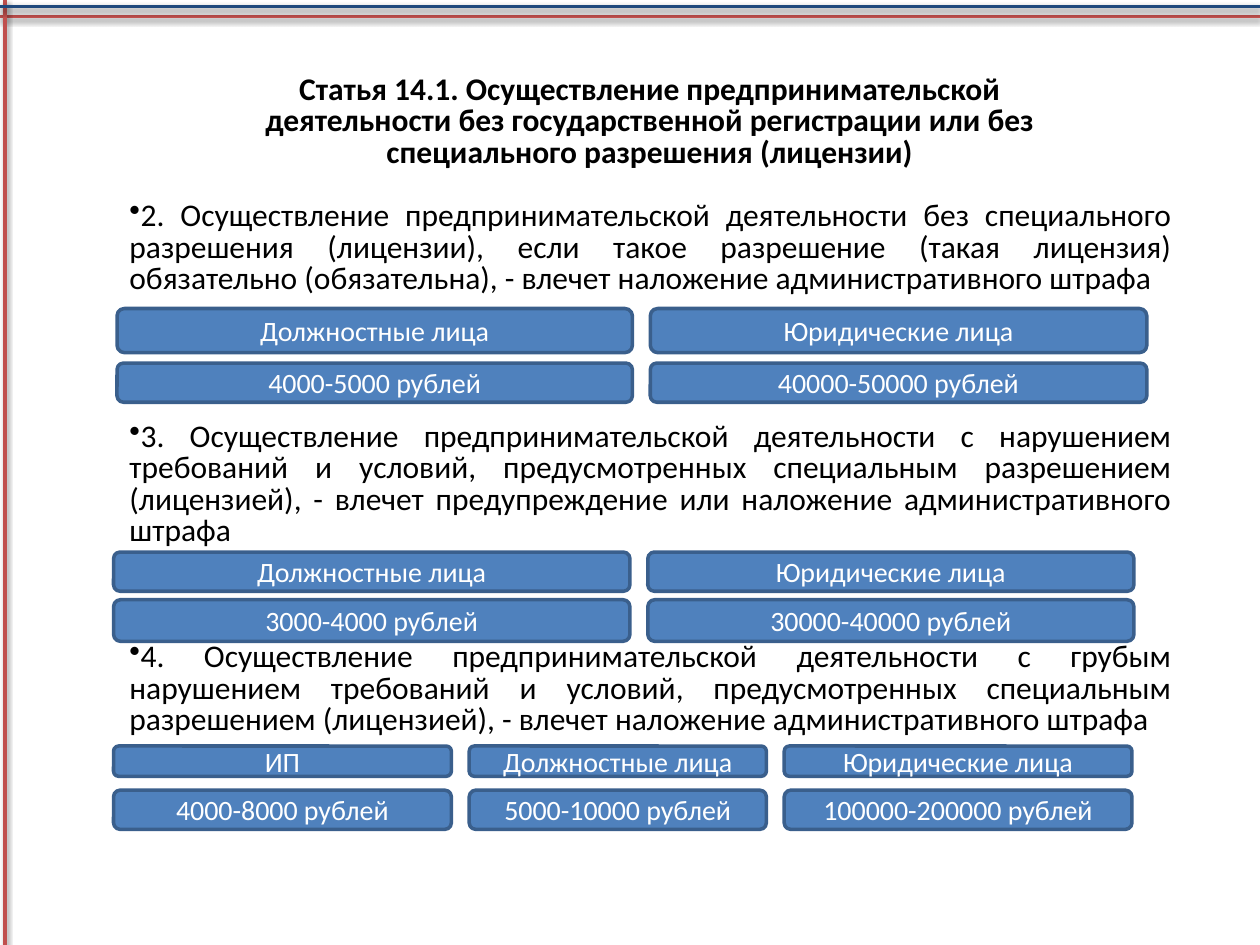
from lxml import etree
from pptx import Presentation
from pptx.dml.color import RGBColor
from pptx.enum.shapes import MSO_CONNECTOR, MSO_SHAPE
from pptx.enum.text import MSO_ANCHOR, MSO_AUTO_SIZE, PP_ALIGN
from pptx.oxml import parse_xml
from pptx.oxml.ns import nsdecls, qn
from pptx.util import Cm, Pt

LINE = MSO_CONNECTOR.STRAIGHT
ROUND = MSO_SHAPE.ROUNDED_RECTANGLE
CENTER, JUSTIFY = PP_ALIGN.CENTER, PP_ALIGN.JUSTIFY
MIDDLE, TOP = MSO_ANCHOR.MIDDLE, MSO_ANCHOR.TOP

FONT = "Calibri"
WIDE, HIGH = 25.4, 19.05
GAP = 0.36
COLORS = {"red": "C0504D", "navy": "1F497D", "blue": "4F81BD",
          "edge": "3A5F8C", "white": "FFFFFF", "black": "000000"}

TITLE = ("Статья 14.1. Осуществление предпринимательской деятельности без "
         "государственной регистрации или без специального разрешения (лицензии)")

# Space before in points, then wording
PARTS = [
    (0, "2. Осуществление предпринимательской деятельности без специального "
        "разрешения (лицензии), если такое разрешение (такая лицензия) обязательно "
        "(обязательна), - влечет наложение административного штрафа"),
    (72, "3. Осуществление предпринимательской деятельности с нарушением требований "
         "и условий, предусмотренных специальным разрешением (лицензией), - влечет "
         "предупреждение или наложение административного штрафа"),
    (54, "4. Осуществление предпринимательской деятельности с грубым нарушением "
         "требований и условий, предусмотренных специальным разрешением (лицензией), "
         "- влечет наложение административного штрафа"),
]

# Box (left, top, height), column widths, row heights, rows of wording
STAFF, FIRMS = "Должностные лица", "Юридические лица"
FINES = [
    ((2.36, 6.22, 1.89), (10.39, 10.01), (0.89, 0.79),
     [(STAFF, FIRMS), ("4000-5000 рублей", "40000-50000 рублей")]),
    ((2.29, 11.13, 1.8), (10.41, 9.8), (0.79, 0.84),
     [(STAFF, FIRMS), ("3000-4000 рублей", "30000-40000 рублей")]),
    ((2.29, 15.04, 1.68), (6.81, 5.99, 7.01), (0.61, 0.79),
     [("ИП", STAFF, FIRMS),
      ("4000-8000 рублей", "5000-10000 рублей", "100000-200000 рублей")]),
]


def tint(name):
    return RGBColor.from_string(COLORS[name])


def style(para, size, color, align, bold=False):
    para.alignment = align
    for run in para.runs:
        run.font.name, run.font.size = FONT, Pt(size)
        run.font.bold = bold
        run.font.color.rgb = tint(color)


def place(shape, box):
    shape.left, shape.top, shape.width, shape.height = map(Cm, box)


def add_rule(slide, start, end, color):
    rule = slide.shapes.add_connector(LINE, *map(Cm, start + end))
    rule.line.color.rgb = tint(color)
    rule.line.width = Pt(2)
    rule._element.spPr.append(parse_xml(
        f'<a:effectLst {nsdecls("a")}><a:outerShdw blurRad="40000" dist="20000" '
        'dir="5400000" rotWithShape="0"><a:srgbClr val="000000">'
        '<a:alpha val="38000"/></a:srgbClr></a:outerShdw></a:effectLst>'))


def add_frame(slide, box):
    left, top, width, height = box
    right, low = left + width, top + height
    add_rule(slide, (right, top + 0.33), (left, top + 0.33), "red")
    add_rule(slide, (left + 0.1, top), (left + 0.1, low), "red")
    add_rule(slide, (left, top + 0.13), (right, top + 0.13), "navy")


def set_title(slide, box):
    title = slide.shapes.title
    place(title, box)
    frame = title.text_frame
    frame.text = TITLE
    frame.auto_size = MSO_AUTO_SIZE.NONE
    frame.vertical_anchor = MIDDLE
    para = frame.paragraphs[0]
    para.line_spacing = Pt(18)
    style(para, 18, "black", CENTER, True)


def add_body(slide, box):
    frame = slide.shapes.add_textbox(*map(Cm, box)).text_frame
    frame.word_wrap = True
    frame.vertical_anchor = TOP
    frame.text = "\n".join(words for _, words in PARTS)
    for para, (space, _) in zip(frame.paragraphs, PARTS):
        para.line_spacing = Pt(18)
        para.space_before = Pt(space)
        props = para._p.get_or_add_pPr()
        etree.SubElement(props, qn("a:buChar")).set("char", "•")
        style(para, 18, "black", JUSTIFY)


def add_fines(slide, box, widths, heights, rows):
    left, top, height = box
    space = height - sum(heights)
    for high, row in zip(heights, rows):
        x = left
        for wide, words in zip(widths, row):
            cell = slide.shapes.add_shape(ROUND, *map(Cm, (x, top, wide, high)))
            cell.shadow.inherit = False
            cell.fill.solid()
            cell.fill.fore_color.rgb = tint("blue")
            cell.line.color.rgb = tint("edge")
            cell.line.width = Pt(2)
            cell.text_frame.text = words
            cell.text_frame.vertical_anchor = MIDDLE
            style(cell.text_frame.paragraphs[0], 16, "white", CENTER)
            x += wide + GAP
        top += high + space


def main():
    deck = Presentation()
    deck.slide_width, deck.slide_height = Cm(WIDE), Cm(HIGH)
    slide = deck.slides.add_slide(deck.slide_layouts[5])
    add_frame(slide, (0, 0, WIDE, HIGH))
    set_title(slide, (4.72, 1.4, 16.76, 2.13))
    add_body(slide, (2.36, 3.94, 21.51, 13.59))
    for group in FINES:
        add_fines(slide, *group)
    deck.save("out.pptx")


if __name__ == "__main__":
    main()
